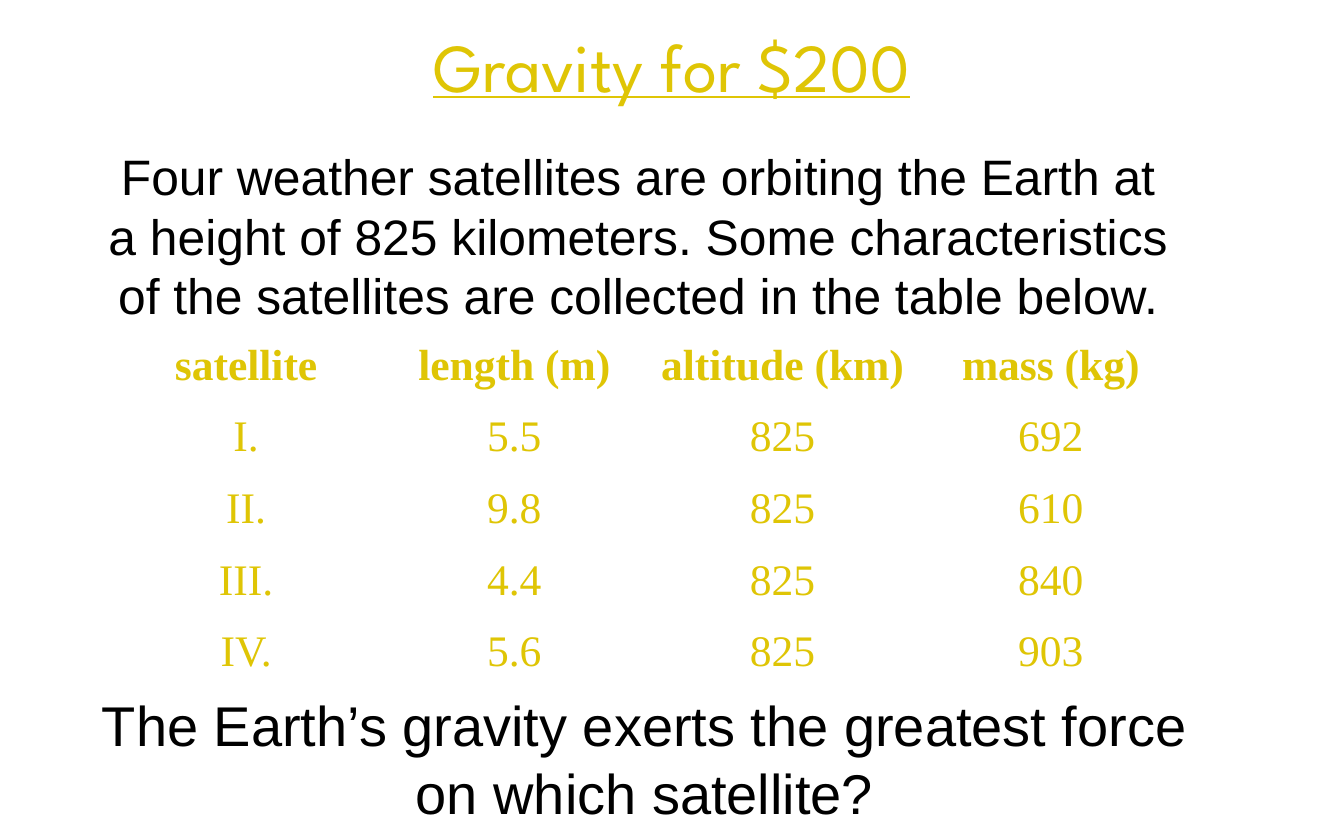
"""Build the quiz slide that compares the gravity on four weather satellites."""
from lxml import etree
from pptx import Presentation
from pptx import util as u
from pptx.dml.color import RGBColor
from pptx.enum import text
from pptx.oxml import ns

GOLD = RGBColor(0xDF, 0xC5, 0x05)
BLACK = RGBColor(0x00, 0x00, 0x00)
WHITE = RGBColor(0xFF, 0xFF, 0xFF)

SATELLITES = [
    ("satellite", "length (m)", "altitude (km)", "mass (kg)"),
    ("I.", "5.5", "825", "692"),
    ("II.", "9.8", "825", "610"),
    ("III.", "4.4", "825", "840"),
    ("IV.", "5.6", "825", "903"),
]


class QuizSlide:
    def __init__(self, slide):
        self.slide = slide
        self.body_font = "Arial"
        self.table_font = "Times New Roman"
        self.table_size = u.Pt(28)
        self.cell_margin = u.Inches(0.05)
        self.border_width = u.Pt(1.5)

    def style(self, paragraph, font, size, color):
        paragraph.alignment = text.PP_ALIGN.CENTER
        paragraph.font.name = font
        paragraph.font.size = size
        paragraph.font.color.rgb = color

    def textbox(self, wording, box, size, font=None, color=BLACK):
        frame = self.slide.shapes.add_textbox(*map(u.Inches, box)).text_frame
        frame.word_wrap = True
        frame.auto_size = text.MSO_AUTO_SIZE.SHAPE_TO_FIT_TEXT
        paragraph = frame.paragraphs[0]
        paragraph.text = wording
        self.style(paragraph, font or self.body_font, u.Pt(size), color)
        return paragraph

    def border(self, cell):
        properties = cell._tc.get_or_add_tcPr()
        for position, side in enumerate(("lnL", "lnR", "lnT", "lnB")):
            line = etree.Element(ns.qn(f"a:{side}"), w=str(self.border_width))
            fill = etree.SubElement(line, ns.qn("a:solidFill"))
            etree.SubElement(fill, ns.qn("a:srgbClr"), val=str(WHITE))
            properties.insert(position, line)

    def table(self, rows, box):
        frame = self.slide.shapes.add_table(len(rows), len(rows[0]), *map(u.Inches, box))
        grid = frame.table
        grid.horz_banding = False
        for row, values in enumerate(rows):
            for column, value in enumerate(values):
                cell = grid.cell(row, column)
                cell.fill.background()
                cell.vertical_anchor = text.MSO_ANCHOR.MIDDLE
                cell.margin_left = cell.margin_right = self.cell_margin
                cell.margin_top = cell.margin_bottom = self.cell_margin
                paragraph = cell.text_frame.paragraphs[0]
                paragraph.text = value
                paragraph.line_spacing = 1.15
                paragraph.font.bold = row == 0
                self.style(paragraph, self.table_font, self.table_size, GOLD)
                self.border(cell)


def main():
    deck = Presentation()
    deck.slide_width, deck.slide_height = u.Inches(12), u.Inches(7.5)
    quiz = QuizSlide(deck.slides.add_slide(deck.slide_layouts[6]))

    title = quiz.textbox("Gravity for $200", (0, 0.17, 12, 0.83), 44, "League Spartan", GOLD)
    title.font.underline = True
    title.space_before = u.Pt(22)
    quiz.table(SATELLITES, (1, 2.91, 9.58, 3.2))
    quiz.textbox(
        "Four weather satellites are orbiting the Earth at a height of 825 kilometers. "
        "Some characteristics of the satellites are collected in the table below.",
        (0.83, 1.25, 9.75, 1.72), 32)
    quiz.textbox(
        "The Earth’s gravity exerts the greatest force on which satellite?",
        (0.67, 6.12, 10.17, 1.31), 36)
    deck.save("out.pptx")


if __name__ == "__main__":
    main()
